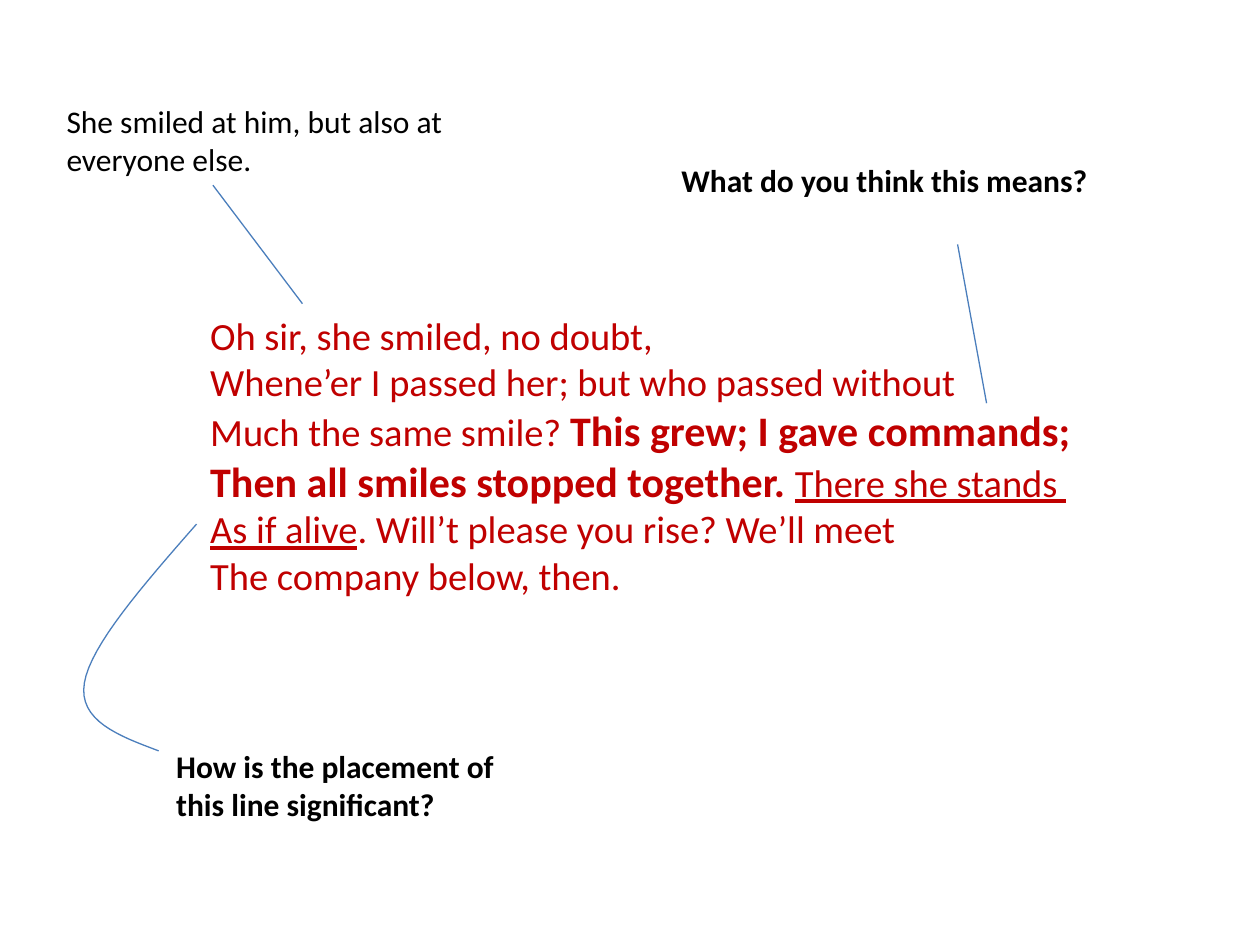
from dataclasses import dataclass

from lxml import etree
from pptx import Presentation
from pptx.dml.color import RGBColor
from pptx.enum.shapes import MSO_CONNECTOR
from pptx.oxml.ns import qn
from pptx.util import Inches, Pt

STRAIGHT = MSO_CONNECTOR.STRAIGHT
FONT = "Calibri"
COLORS = {"paper": "FFFFFF", "poem": "C00000", "note": "000000", "pointer": "4B7EBC"}
POINTER_WIDTH = Pt(0.75)
CURVE_STEPS = 16

Point = tuple[float, float]


@dataclass
class Phrase:
    text: str
    size: int = 22
    bold: bool = False
    underline: bool = False


@dataclass
class Note:
    left: float
    top: float
    width: float
    text: str
    bold: bool = True


POEM = [
    [Phrase("Oh sir, she smiled, no doubt,")],
    [Phrase("Whene’er I passed her; but who passed without")],
    [Phrase("Much the same smile? "),
     Phrase("This grew; I gave commands;", size=24, bold=True)],
    [Phrase("Then all smiles stopped together. ", size=24, bold=True),
     Phrase("There she stands ", underline=True)],
    [Phrase("As if alive", underline=True),
     Phrase(". Will’t please you rise? We’ll meet")],
    [Phrase("The company below, then.")],
]
NOTES = [
    Note(0.43, 0.76, 4.17, "She smiled at him, but also at everyone else.", bold=False),
    Note(5.31, 1.23, 4.02, "What do you think this means?"),
    Note(1.3, 5.88, 3.15, "How is the placement of this line significant?"),
]
POINTERS = [((2.4, 2.41), (1.69, 1.47)), ((7.83, 3.2), (7.6, 1.94))]
# Cubic Bezier segments: start, two control points, end
CURVE = [
    ((1.56, 4.16), (1.14, 4.64), (0.72, 5.12), (0.67, 5.42)),
    ((0.67, 5.42), (0.62, 5.72), (0.94, 5.84), (1.26, 5.96)),
]


def rgb(name: str) -> RGBColor:
    return RGBColor.from_string(COLORS[name])


def add_text(slide, left: float, top: float, width: float, height: float,
             lines: list[list[Phrase]], color: str):
    box = slide.shapes.add_textbox(Inches(left), Inches(top), Inches(width), Inches(height))
    frame = box.text_frame
    frame.word_wrap = True
    for index, phrases in enumerate(lines):
        paragraph = frame.add_paragraph() if index else frame.paragraphs[0]
        for phrase in phrases:
            run = paragraph.add_run()
            run.text = phrase.text
            run.font.name = FONT
            run.font.size = Pt(phrase.size)
            run.font.bold = phrase.bold
            run.font.underline = phrase.underline
            run.font.color.rgb = rgb(color)
    return box


def style_pointer(line) -> None:
    line.color.rgb = rgb("pointer")
    line.width = POINTER_WIDTH


def add_pointer(slide, start: Point, end: Point) -> None:
    pointer = slide.shapes.add_connector(STRAIGHT, *map(Inches, start + end))
    style_pointer(pointer.line)
    etree.SubElement(pointer.element.spPr, qn("a:effectLst"))


def bezier_point(segment: tuple[Point, Point, Point, Point], t: float) -> Point:
    weights = ((1 - t) ** 3, 3 * t * (1 - t) ** 2, 3 * t ** 2 * (1 - t), t ** 3)
    x, y = (sum(w * p[axis] for w, p in zip(weights, segment)) for axis in (0, 1))
    return x, y


def add_curve(slide, segments: list[tuple[Point, Point, Point, Point]]) -> None:
    points = [bezier_point(segment, step / CURVE_STEPS)
              for segment in segments for step in range(1, CURVE_STEPS + 1)]
    builder = slide.shapes.build_freeform(*map(Inches, segments[0][0]))
    builder.add_line_segments([(Inches(x), Inches(y)) for x, y in points], close=False)
    curve = builder.convert_to_shape()
    curve.fill.background()
    curve.shadow.inherit = False
    style_pointer(curve.line)


def main() -> None:
    deck = Presentation()
    deck.slide_width, deck.slide_height = Inches(10), Inches(7.5)
    slide = deck.slides.add_slide(deck.slide_layouts[6])

    # Poem excerpt
    poem = add_text(slide, 1.57, 2.43, 8.43, 4.67, POEM, "poem")
    poem.fill.solid()
    poem.fill.fore_color.rgb = rgb("paper")
    poem.text_frame.paragraphs[-1].space_after = Pt(10)

    # Annotations
    for note in NOTES:
        phrase = Phrase(note.text, size=18, bold=note.bold)
        add_text(slide, note.left, note.top, note.width, 0.71, [[phrase]], "note")

    # Pointers from the poem to its annotations
    for start, end in POINTERS:
        add_pointer(slide, start, end)
    add_curve(slide, CURVE)

    deck.save("out.pptx")


if __name__ == "__main__":
    main()
